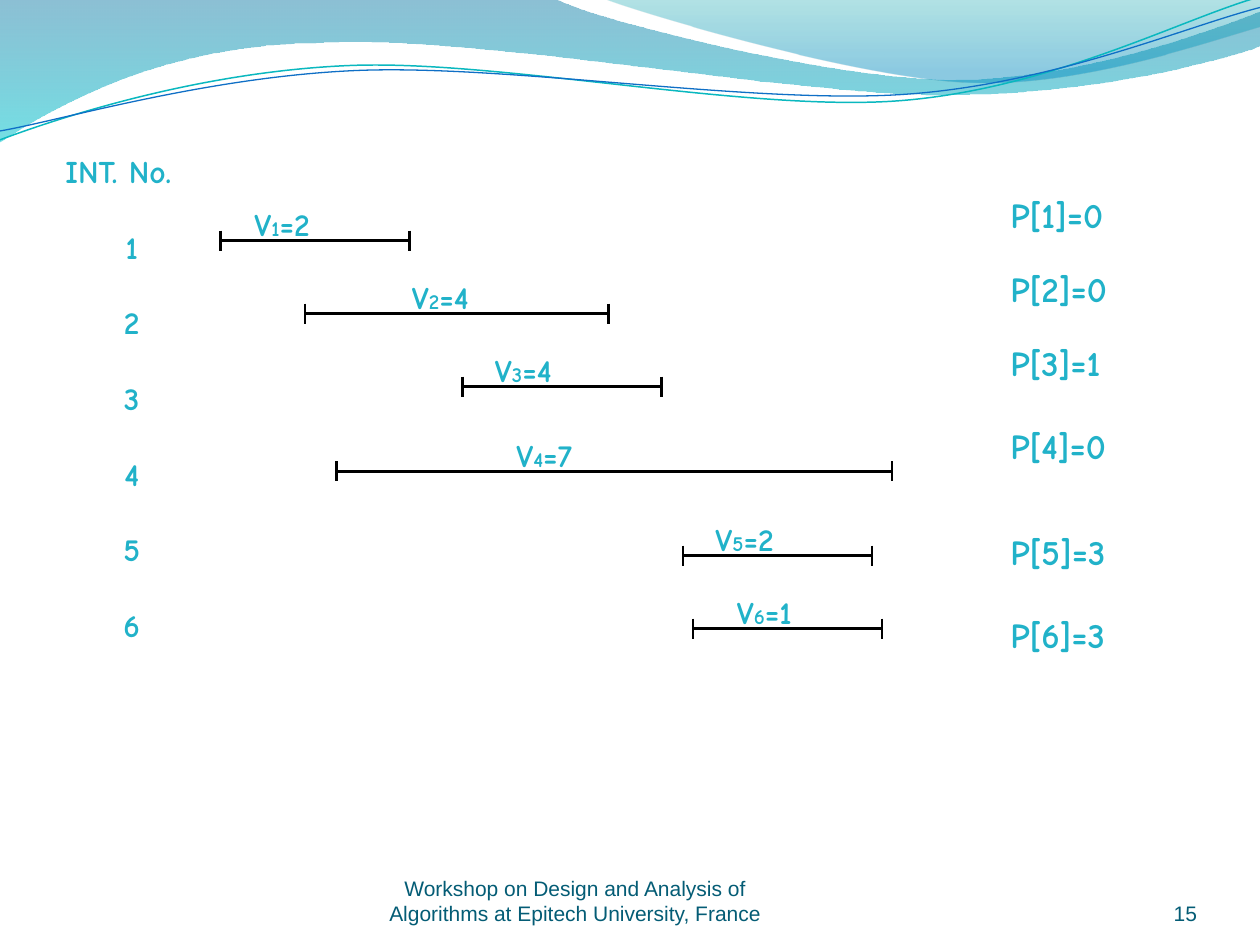
import math

from lxml import etree
from pptx import Presentation
from pptx.dml.color import RGBColor
from pptx.enum import shapes, text
from pptx.oxml.ns import qn
from pptx.util import Inches, Pt

TEAL = RGBColor(0x21, 0xB2, 0xC9)
DARK = RGBColor(0x04, 0x5C, 0x75)
BLACK = RGBColor(0, 0, 0)
AQUA = RGBColor(0x0A, 0xB8, 0xBF)
BLUE = RGBColor(0x0F, 0x6F, 0xC6)
SEA = RGBColor(0x00, 0x74, 0xA1)
CYAN = RGBColor(0x00, 0xC6, 0xCF)
GREEN = RGBColor(0x00, 0xA1, 0xA9)
SKY = RGBColor(0x00, 0x8B, 0xBF)
COMIC = "Comic Neue"
TILT = 2.7

# Wave outlines: pairs are line ends, sixes are curve controls and ends
BAND = [(0, -0.01), (4.4, -0.01), (4.76, 0.17, 6.64, 0.63, 7.58, 0.63),
        (8.53, 0.63, 9.58, 0.26, 10, 0.09), (10.01, 0.36),
        (9.83, 0.44, 8.7, 0.76, 7.46, 0.75),
        (6.22, 0.75, 3.82, 0.28, 2.57, 0.34),
        (1.29, 0.35, 0.46, 0.83, -0.01, 1.13)]
CREST = [(4.79, -0.01), (5.09, 0.11, 6.82, 0.62, 7.69, 0.65),
         (8.56, 0.69, 9.61, 0.32, 10, 0.21), (10, 0)]
UPPER = [(0, 1.11), (0.48, 0.93, 1.58, 0.57, 2.77, 0.52),
         (3.95, 0.47, 5.93, 0.89, 7.13, 0.8),
         (8.33, 0.71, 9.38, 0.15, 9.98, -0.02)]
LOWER = [(0, 1.04), (0.47, 0.96, 1.64, 0.61, 2.83, 0.56),
         (4.03, 0.51, 5.97, 0.83, 7.17, 0.75),
         (8.36, 0.67, 9.41, 0.21, 10, 0.06)]

# Intervals: start, end, bar y, label x, value, P value, P label y, P label width
ROWS = [(1.75, 3.25, 1.91, 1.92, 2, 0, 1.49, 1.17),
        (2.42, 4.83, 2.49, 3.17, 4, 0, 2.07, 1.17),
        (3.67, 5.25, 3.07, 3.83, 4, 1, 2.66, 1.17),
        (2.67, 7.08, 3.74, 4, 7, 0, 3.32, 1.25),
        (5.42, 6.92, 4.41, 5.58, 2, 3, 4.16, 1.08),
        (5.5, 7, 4.99, 5.75, 1, 3, 4.82, 1.17)]


def turn(x, y, cx, cy):
    """Turn a point clockwise by the tilt about a centre."""
    c, s = math.cos(math.radians(TILT)), math.sin(math.radians(TILT))
    return cx + (x - cx) * c - (y - cy) * s, cy + (x - cx) * s + (y - cy) * c


def outline(slide, path, close, mid=None):
    pts = [pt for seg in path for pt in zip(seg[::2], seg[1::2])]
    if mid:
        pts = [turn(x, y, *mid) for x, y in pts]
    pts = [(Inches(x), Inches(y)) for x, y in pts]
    form = slide.shapes.build_freeform(*pts[0])
    form.add_line_segments(pts[1:], close=close)
    shape = form.convert_to_shape()
    shape.shadow.inherit = False
    # Join each run of three points into one cubic curve
    lines = iter(list(shape._element.iter(qn("a:lnTo"))))
    for seg in path[1:]:
        first = next(lines)
        if len(seg) == 6:
            first.tag = qn("a:cubicBezTo")
            for _ in range(2):
                extra = next(lines)
                first.append(extra[0])
                extra.getparent().remove(extra)
    return shape


def wave(slide, path, stops):
    shape = outline(slide, path, True)
    shape.line.fill.background()
    shape.fill.gradient()
    shape.fill.gradient_angle = 270
    for stop, (pos, color, _) in zip(shape.fill.gradient_stops, stops):
        stop.position = pos
        stop.color.rgb = color
    tags = list(shape._element.spPr.iter(qn("a:srgbClr")))
    for tag, (_, _, alpha) in zip(tags, stops):
        etree.SubElement(tag, qn("a:alpha")).set("val", str(alpha * 1000))


def curve(slide, path, color, width, mid):
    shape = outline(slide, path, False, mid)
    shape.rotation = 360 - TILT
    shape.fill.background()
    shape.line.color.rgb = color
    shape.line.width = Pt(width)


def rule(slide, x1, y1, x2, y2):
    line = slide.shapes.add_connector(shapes.MSO_CONNECTOR.STRAIGHT, Inches(x1),
                                      Inches(y1), Inches(x2), Inches(y2))
    line.line.color.rgb = BLACK
    line.line.width = Pt(1.5)
    etree.SubElement(line._element.spPr, qn("a:effectLst"))


def style(para, size, name=COMIC, color=TEAL, bold=True):
    font = para.font
    font.size, font.name, font.bold = Pt(size), name, bold
    font.color.rgb = color


def box(slide, x, y, w, h):
    frame = slide.shapes.add_textbox(Inches(x), Inches(y), Inches(w),
                                     Inches(h)).text_frame
    frame.word_wrap = True
    return frame


def label(slide, x, y, w, h, words, size):
    para = box(slide, x, y, w, h).paragraphs[0]
    for word, small in words:
        run = para.add_run()
        run.text = word
        if small:
            run.font.size = Pt(small)
    style(para, size)


def footer(slide, x, w, words, align):
    frame = box(slide, x, 6.95, w, 0.4)
    frame.margin_left = frame.margin_right = frame.margin_top = frame.margin_bottom = 0
    frame.vertical_anchor = text.MSO_ANCHOR.BOTTOM
    para = frame.paragraphs[0]
    para.text = words
    para.alignment = align
    style(para, 12, "Arial", DARK, False)


def index(slide):
    frame = box(slide, 0.42, 1.16, 1.25, 4.64)
    frame.paragraphs[0].text = "INT. No."
    style(frame.paragraphs[0], 18)
    for num in range(1, len(ROWS) + 1):
        para = frame.add_paragraph()
        para.text = str(num)
        para.alignment = text.PP_ALIGN.CENTER
        para.space_before = Pt(21.6)
        style(para, 18)


def main():
    deck = Presentation()
    deck.slide_width, deck.slide_height = Inches(10), Inches(7.5)
    slide = deck.slides.add_slide(deck.slide_layouts[6])

    # Waves at the top
    wave(slide, BAND, [(0, SEA, 45), (1, CYAN, 55)])
    wave(slide, CREST, [(0, GREEN, 30), (0.8, SKY, 45)])
    curve(slide, UPPER, AQUA, 0.85, (4.99, 0.58))
    curve(slide, LOWER, BLUE, 0.75, (5, 0.59))

    # Footer
    footer(slide, 2.92, 3.29, "Workshop on Design and Analysis of Algorithms "
           "at Epitech University, France", text.PP_ALIGN.CENTER)
    footer(slide, 8.67, 0.83, "15", text.PP_ALIGN.RIGHT)

    # Intervals with their values and predecessors
    index(slide)
    for num, (start, end, y, x, val, prev, top, wide) in enumerate(ROWS, 1):
        rule(slide, start, y, end, y)
        for tick in (start, end):
            rule(slide, tick, y - 0.08, tick, y + 0.08)
        label(slide, x, y - 0.33, 0.92, 0.4,
              [("V", None), (str(num), 12), (f"={val}", None)], 18)
        label(slide, 7.92, top, wide, 0.44, [(f"P[{num}]={prev}", None)], 20)

    deck.save("out.pptx")


if __name__ == "__main__":
    main()
